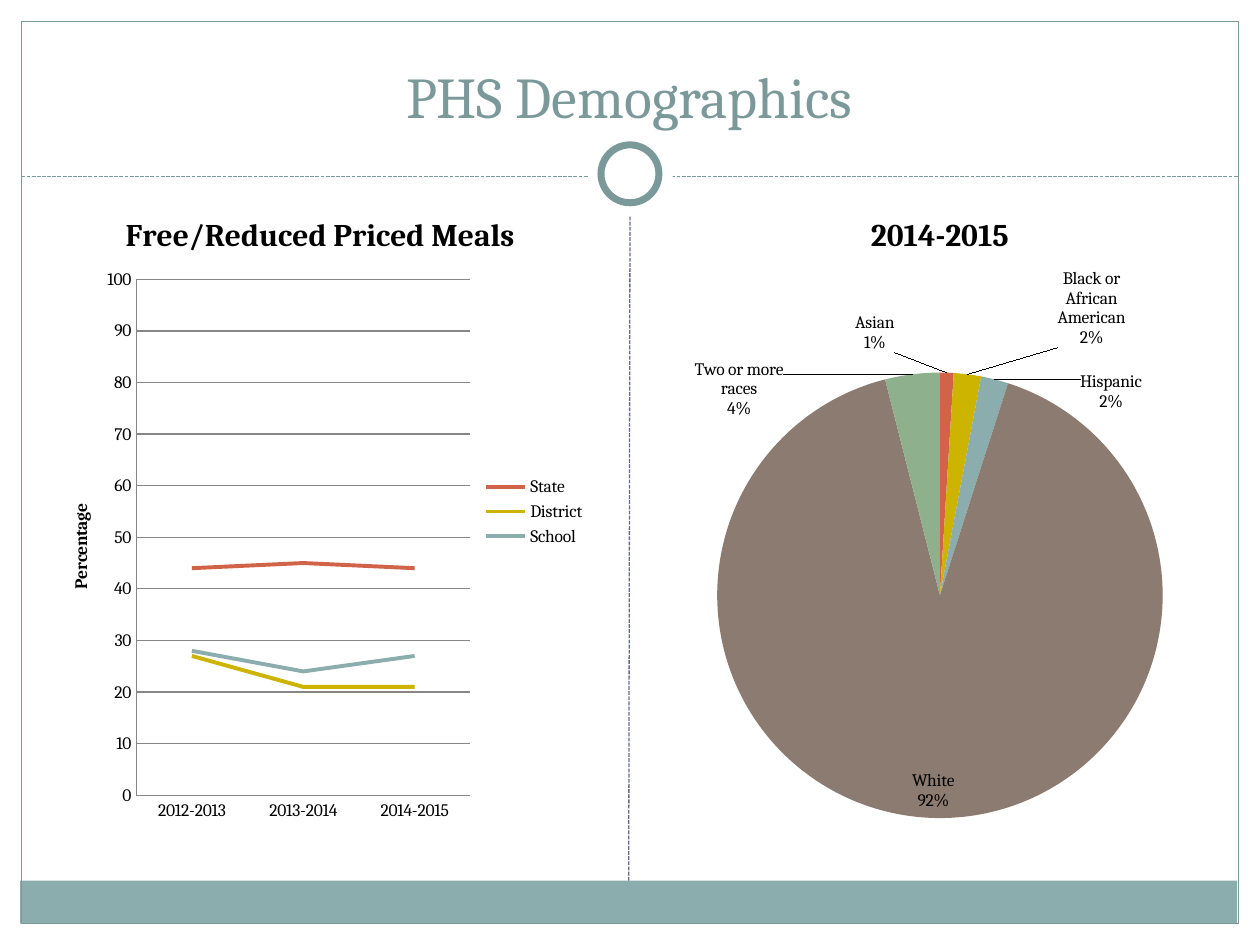
from lxml import etree
from pptx import Presentation
from pptx.chart.data import CategoryChartData
from pptx.dml.color import RGBColor
from pptx.enum import chart as ch, dml, shapes, text
from pptx.oxml import parse_xml
from pptx.oxml.ns import nsdecls, qn
from pptx.util import Inches, Pt

FONT = "Cambria"
WHITE = RGBColor(0xFF, 0xFF, 0xFF)
BLACK = RGBColor(0, 0, 0)
GREY = RGBColor(0x86, 0x86, 0x86)
TEAL = RGBColor(0x7C, 0x99, 0x9A)
SLATE = RGBColor(0x64, 0x6B, 0x86)
RED = RGBColor(0xD1, 0x63, 0x49)
GOLD = RGBColor(0xCC, 0xB4, 0x00)
BLUE = RGBColor(0x8C, 0xAD, 0xAE)
BROWN = RGBColor(0x8C, 0x7B, 0x70)
GREEN = RGBColor(0x8F, 0xB0, 0x8C)


def layout_xml(x, y, w=None, h=None):
    """Manual chart layout in fractions; with a size it sets the inner plot."""
    size = f'<c:w val="{w}"/><c:h val="{h}"/>' if w else ""
    edge = '<c:xMode val="edge"/><c:yMode val="edge"/>' if w else ""
    target = '<c:layoutTarget val="inner"/>' if w else ""
    return (f'<c:layout {nsdecls("c")}><c:manualLayout>{target}{edge}'
            f'<c:x val="{x}"/><c:y val="{y}"/>{size}</c:manualLayout></c:layout>')


def add_chart(kind, left, data, title, plot_box):
    chart = s.shapes.add_chart(kind, Inches(left), Inches(1.5),
                               Inches(4.42), Inches(5.12), data).chart
    chart.font.name = FONT
    chart.font.size = Pt(10)
    chart.font.color.rgb = BLACK
    r = chart.chart_title.text_frame.paragraphs[0].add_run()
    r.text = title
    r.font.name, r.font.size, r.font.bold = FONT, Pt(18), True
    r.font.color.rgb = BLACK
    chart.chart_title.include_in_layout = False
    area = chart._chartSpace.find(".//" + qn("c:plotArea"))
    for old in area.findall(qn("c:layout")):
        area.remove(old)
    area.insert(0, parse_xml(layout_xml(*plot_box)))
    return chart


prs = Presentation()
prs.slide_width, prs.slide_height = Inches(10), Inches(7.5)
s = prs.slides.add_slide(prs.slide_layouts[5])

# Frame: kind, left, top, width, height, fill, line width
RECT, OVAL = shapes.MSO_SHAPE.RECTANGLE, shapes.MSO_SHAPE.OVAL
RULES = [((0.17, 1.4), (9.83, 1.4), TEAL), ((4.99, 6.99), (5, 1.72), SLATE)]
FRAME = [
    (RECT, 0, 0, 10, 1.52, WHITE, 0),
    (RECT, 0, 0, 0.17, 7.5, WHITE, 0),
    (RECT, 9.83, 0, 0.17, 7.5, WHITE, 0),
    (RECT, 0.16, 6.99, 9.66, 0.34, BLUE, 0),
    (RECT, 0.17, 0.17, 9.66, 7.16, None, 0.75),
    RULES[0],
    (OVAL, 4.67, 1.05, 0.67, 0.67, WHITE, 0),
    (OVAL, 4.77, 1.15, 0.46, 0.46, WHITE, 4),
    RULES[1],
]
for item in FRAME:
    if item in RULES:
        start, end, color = item
        rule = s.shapes.add_connector(shapes.MSO_CONNECTOR.STRAIGHT,
                                      *map(Inches, start + end))
        rule.line.color.rgb = color
        rule.line.width = Pt(0.75)
        rule.line.dash_style = dml.MSO_LINE.SQUARE_DOT
        etree.SubElement(rule._element.spPr, qn("a:effectLst"))
        continue
    kind, *box, fill, width = item
    sp = s.shapes.add_shape(kind, *map(Inches, box))
    sp.shadow.inherit = False
    if fill is None:
        sp.fill.background()
    else:
        sp.fill.solid()
        sp.fill.fore_color.rgb = fill
    if width:
        sp.line.color.rgb = TEAL
        sp.line.width = Pt(width)
    else:
        sp.line.fill.background()

# Title, brought in front of the frame
title = s.shapes.title
title._element.getparent().append(title._element)
title.left, title.top = Inches(0.33), Inches(0.25)
title.width, title.height = Inches(9.33), Inches(0.83)
tf = title.text_frame
tf.vertical_anchor = text.MSO_ANCHOR.BOTTOM
p = tf.paragraphs[0]
p.alignment = text.PP_ALIGN.CENTER
r = p.add_run()
r.text = "PHS Demographics"
r.font.name, r.font.size = FONT, Pt(33)
r.font.color.rgb = TEAL

# Meals line chart
meals = CategoryChartData()
meals.categories = ["2012-2013", "2013-2014", "2014-2015"]
meals.add_series("State", [44, 45, 44])
meals.add_series("District", [27, 21, 21])
meals.add_series("School", [28, 24, 27])
chart = add_chart(ch.XL_CHART_TYPE.LINE, 0.33, meals,
                  "Free/Reduced Priced Meals", (0.17, 0.14, 0.6, 0.8))
for series, color in zip(chart.plots[0].series, [RED, GOLD, BLUE]):
    series.smooth = False
    series.marker.style = ch.XL_MARKER_STYLE.NONE
    series.format.line.color.rgb = color
    series.format.line.width = Pt(2.25)
chart.has_legend = True
chart.legend.position = ch.XL_LEGEND_POSITION.RIGHT
chart.legend.include_in_layout = False
values = chart.value_axis
values.minimum_scale, values.maximum_scale, values.major_unit = 0, 100, 10
values.has_major_gridlines = True
values.major_gridlines.format.line.color.rgb = GREY
for axis in (values, chart.category_axis):
    axis.major_tick_mark = ch.XL_TICK_MARK.NONE
    axis.format.line.color.rgb = GREY
r = values.axis_title.text_frame.paragraphs[0].add_run()
r.text = "Percentage "
r.font.name, r.font.size, r.font.bold = FONT, Pt(10), True
r.font.color.rgb = BLACK

# Ethnicity pie chart: name, share, colour, label offset
SLICES = [
    ("Asian", 1, RED, (-0.13, -0.02)),
    ("Black or African American", 2, GOLD, (0.16, -0.03)),
    ("Hispanic", 2, BLUE, (0.15, 0.06)),
    ("White", 92, BROWN, None),
    ("Two or more races", 4, GREEN, (-0.23, 0.08)),
]
races = CategoryChartData()
races.categories = [name for name, *_ in SLICES]
races.add_series("2014-2015", [share for _, share, *_ in SLICES])
chart = add_chart(ch.XL_CHART_TYPE.PIE, 5.25, races, "2014-2015",
                  (0.1, 0.28, 0.8, 0.7))
chart.has_legend = False
chart.plots[0].vary_by_categories = True
pie = chart.plots[0].series[0]

# The rounded shares add up to 101, so labels show the value with a % sign
NUMBER = '<c:numFmt formatCode="0&quot;%&quot;" sourceLinked="0"/>'
SHOW = ('<c:showLegendKey val="0"/><c:showVal val="1"/><c:showCatName val="1"/>'
        '<c:showSerName val="0"/><c:showPercent val="0"/>'
        '<c:showBubbleSize val="0"/><c:separator>\n</c:separator>')
labels = ""
for i, (_, _, color, offset) in enumerate(SLICES):
    point = pie.points[i]
    point.format.fill.solid()
    point.format.fill.fore_color.rgb = color
    if offset:
        labels += (f'<c:dLbl><c:idx val="{i}"/>{layout_xml(*offset)}{NUMBER}'
                   f'<c:dLblPos val="outEnd"/>{SHOW}</c:dLbl>')
pie._element.find(qn("c:cat")).addprevious(parse_xml(
    f'<c:dLbls {nsdecls("c")}>{labels}{NUMBER}<c:dLblPos val="inEnd"/>{SHOW}'
    '<c:showLeaderLines val="1"/></c:dLbls>'))

prs.save("out.pptx")
